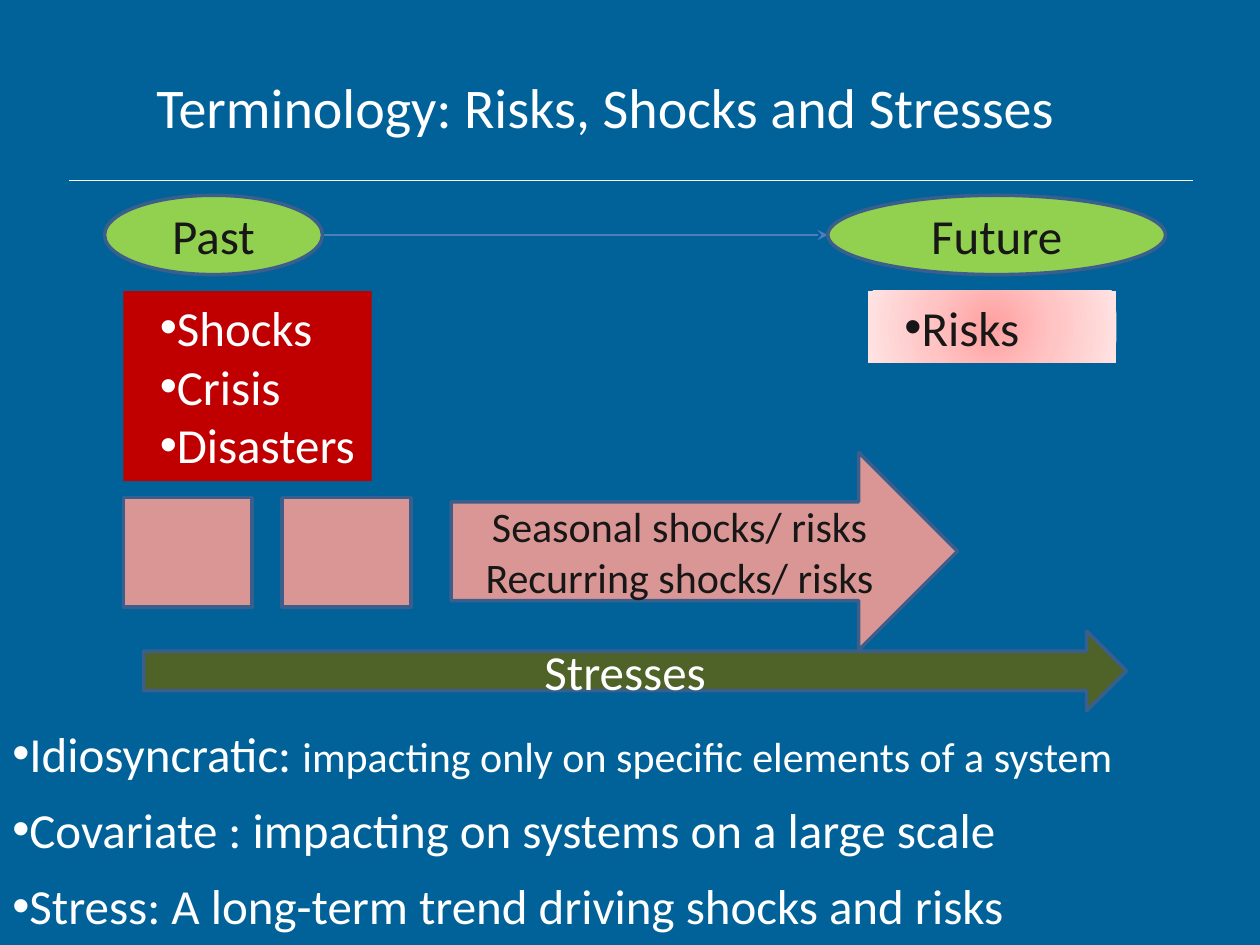
from lxml import etree
from pptx import Presentation
from pptx.dml.color import RGBColor
from pptx.enum.shapes import MSO_CONNECTOR as Connector, MSO_SHAPE as Shape
from pptx.enum.text import MSO_ANCHOR as Anchor, PP_ALIGN as Align
from pptx.oxml.ns import qn
from pptx.util import Inches, Pt

WHITE, INK = "FFFFFF", "171717"
GREEN, ROSE, OLIVE, RED = "92D050", "D99694", "4F6228", "C00000"
OUTLINE = "3A5F8C"


def color(value):
    return RGBColor.from_string(value)


def write(frame, paragraphs, size=28, ink=WHITE, align=Align.LEFT,
          anchor=Anchor.MIDDLE, bullet=False, indent=0, spacing=None):
    """Each paragraph is a string or a list of (text, size) spans."""
    frame.word_wrap = True
    frame.vertical_anchor = anchor
    for number, content in enumerate(paragraphs):
        para = frame.add_paragraph() if number else frame.paragraphs[0]
        para.alignment = align
        if spacing:
            para.line_spacing = spacing
        if bullet:
            properties = para._p.get_or_add_pPr()
            properties.set("marL", "0")
            properties.set("indent", str(Inches(indent)))
            etree.SubElement(properties, qn("a:buFont"), typeface="Arial")
            etree.SubElement(properties, qn("a:buChar"), char="•")
        spans = [(content, size)] if isinstance(content, str) else content
        for text, points in spans:
            span = para.add_run()
            span.text = text
            span.font.name = "Calibri"
            span.font.size = Pt(points)
            span.font.color.rgb = color(ink)


def add_block(page, kind, box, fill, outline=OUTLINE, paragraphs=(), **style):
    block = page.shapes.add_shape(kind, *map(Inches, box))
    block.shadow.inherit = False
    block.fill.solid()
    block.fill.fore_color.rgb = color(fill)
    if outline:
        block.line.color.rgb = color(outline)
        block.line.width = Pt(2)
    else:
        block.line.fill.background()
    if paragraphs:
        write(block.text_frame, paragraphs, **style)
    return block


def add_line(page, left, right, top, ink, width, head=None):
    line = page.shapes.add_connector(
        Connector.STRAIGHT, Inches(left), Inches(top), Inches(right), Inches(top))
    line.line.color.rgb = color(ink)
    line.line.width = Pt(width)
    if head:
        etree.SubElement(line.line._get_or_add_ln(), qn("a:tailEnd"), type=head)
    etree.SubElement(line._element.spPr, qn("a:effectLst"))


def fill_radial(shape, stops):
    """Fill from the centre outwards with (percent, colour) stops."""
    shape.fill.gradient()
    gradient = shape._element.spPr.find(qn("a:gradFill"))
    for child in list(gradient):
        gradient.remove(child)
    stop_list = etree.SubElement(gradient, qn("a:gsLst"))
    for percent, value in stops:
        stop = etree.SubElement(stop_list, qn("a:gs"), pos=str(percent * 1000))
        etree.SubElement(stop, qn("a:srgbClr"), val=value)
    shade = etree.SubElement(gradient, qn("a:path"), path="circle")
    etree.SubElement(shade, qn("a:fillToRect"),
                     {side: "50000" for side in "ltrb"})


def add_title(page, left, top, width, height):
    title = page.shapes.title
    title.left, title.top = Inches(left), Inches(top)
    title.width, title.height = Inches(width), Inches(height)
    write(title.text_frame, ["Terminology: Risks, Shocks and Stresses"], size=32)
    add_line(page, 0.55, 9.47, top + height + 0.03, WHITE, 0.5)


def add_timeline(page, left, top, width, height):
    past_width, future_width = 1.73, 2.68
    future_left = left + width - future_width
    add_line(page, left + past_width, future_left, top + height / 2,
             "4B7EBC", 1.25, head="stealth")
    for name, start, span in (("Past", left, past_width),
                              ("Future", future_left, future_width)):
        add_block(page, Shape.OVAL, (start, top, span, height), GREEN,
                  paragraphs=[name], ink=INK, align=Align.CENTER)


def add_events(page, left, top, width):
    """Bulleted boxes below the two ends of the timeline."""
    box_width = 1.97
    style = dict(outline=None, anchor=Anchor.TOP, bullet=True, indent=0.19)
    add_block(page, Shape.RECTANGLE, (left, top, box_width, 1.51), RED,
              paragraphs=["Shocks", "Crisis", "Disasters"], **style)
    risks = add_block(page, Shape.RECTANGLE,
                      (left + width - box_width, top, box_width, 0.57), WHITE,
                      paragraphs=["Risks"], ink=INK, **style)
    fill_radial(risks, [(0, "FFA0A0"), (50, "FFC5C5"), (100, "FFE3E3")])


def add_recurring(page, left, top, width, height):
    """Two past blocks leading to the arrow of recurring shocks."""
    block_width, block_height, step = 1.02, 0.87, 1.26
    arrow_left = left + 2.6
    add_block(page, Shape.RIGHT_ARROW,
              (arrow_left, top, left + width - arrow_left, height), ROSE,
              paragraphs=["Seasonal shocks/ risks", "Recurring shocks/ risks"],
              size=24, ink=INK, align=Align.CENTER)
    for column in range(2):
        add_block(page, Shape.RECTANGLE,
                  (left + column * step, top + 0.36, block_width, block_height), ROSE)


def add_definitions(page, box):
    definitions = page.shapes.add_textbox(*map(Inches, box))
    write(definitions.text_frame, [
        [("Idiosyncratic: ", 28),
         ("impacting only on specific elements of a system", 24)],
        "Covariate : impacting on systems on a large scale",
        "Stress: A long-term trend driving shocks and risks",
    ], anchor=Anchor.TOP, bullet=True, spacing=1.3)


def main():
    deck = Presentation()
    deck.slide_width, deck.slide_height = Inches(10), Inches(7.5)
    page = deck.slides.add_slide(deck.slide_layouts[5])
    page.background.fill.solid()
    page.background.fill.fore_color.rgb = color("006299")

    add_title(page, 1.14, 0.28, 8.11, 1.12)
    add_timeline(page, 0.83, 1.55, 8.42, 0.63)
    add_events(page, 0.98, 2.31, 7.88)
    add_block(page, Shape.RIGHT_ARROW, (1.14, 5.01, 7.8, 0.63), OLIVE,
              paragraphs=["Stresses"], align=Align.CENTER)
    add_definitions(page, (0, 5.55, 10, 3.16))
    add_recurring(page, 0.98, 3.59, 6.62, 1.57)
    deck.save("out.pptx")


if __name__ == "__main__":
    main()
